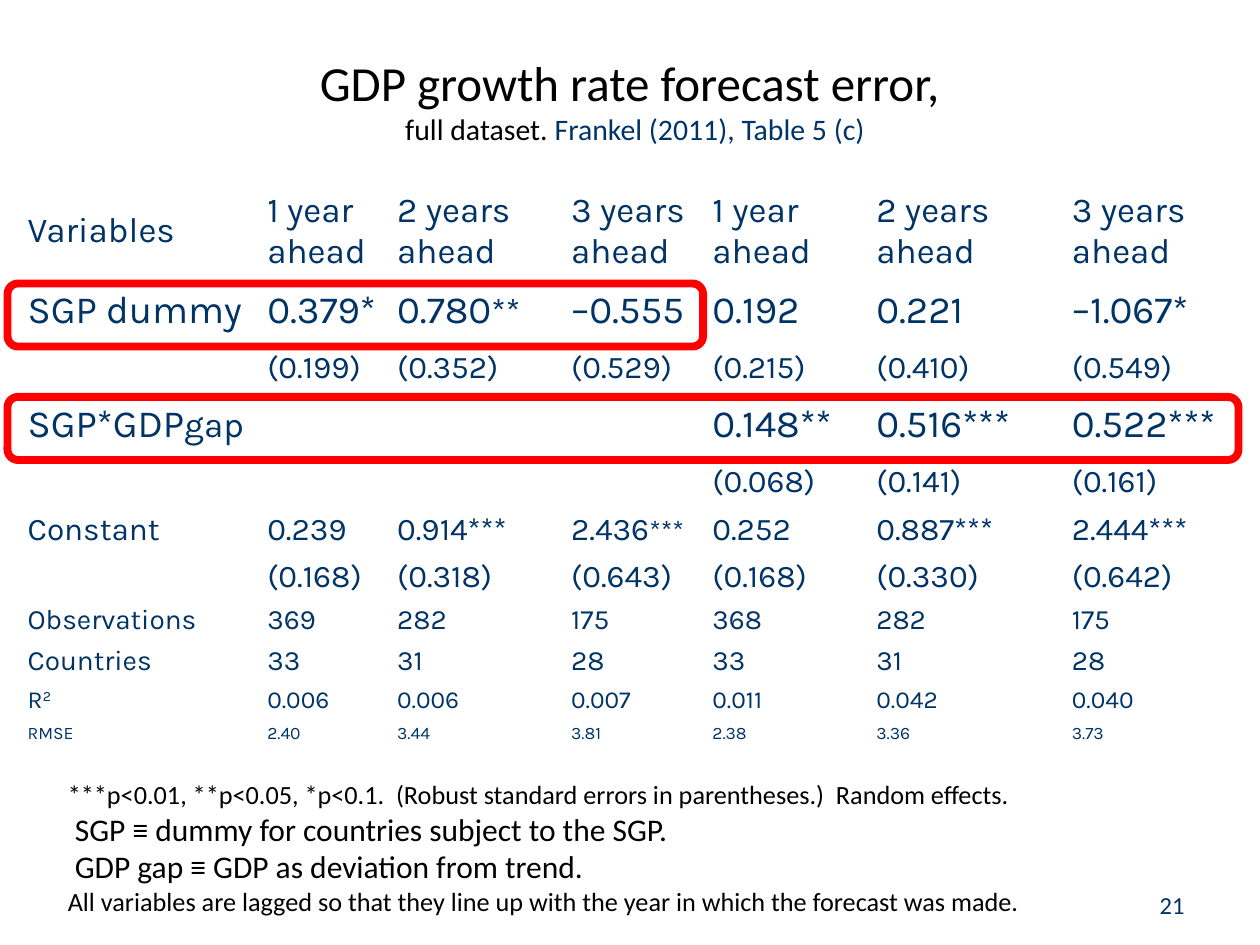
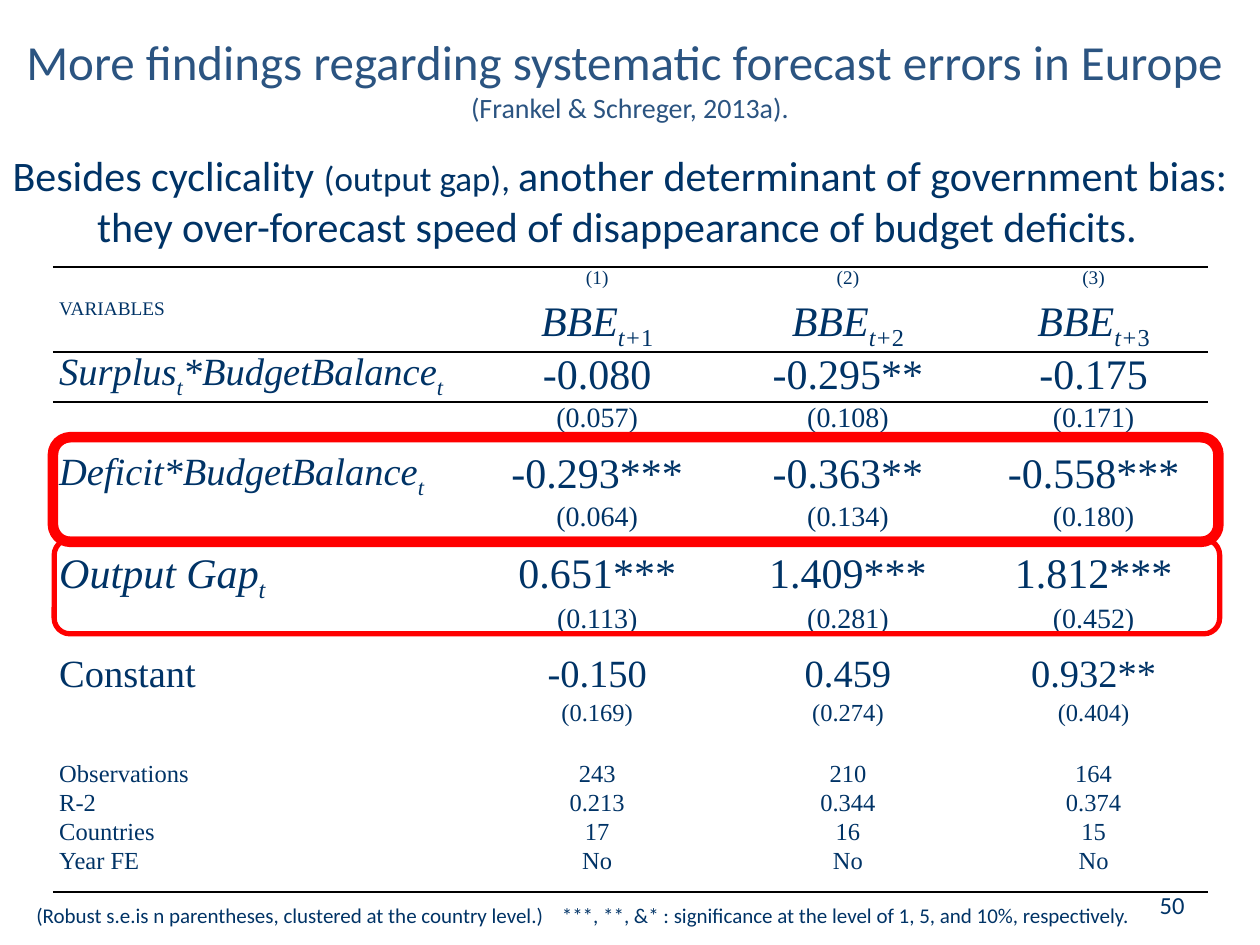
from dataclasses import dataclass

from lxml import etree
from pptx import Presentation, util as u
from pptx.dml.color import RGBColor
from pptx.enum import shapes, text
from pptx.oxml import ns


@dataclass(frozen=True)
class Theme:
    navy: str = "003366"
    blue: str = "2B5481"
    black: str = "000000"
    red: str = "FF0000"
    sans: str = "Calibri"
    grid: str = "Karla"
    serif: str = "Times New Roman"
    title: int = 28
    lead: int = 24
    page: int = 14
    plain: str = "{2D5ABB26-0587-4C30-8999-92F81FD0307C}"


T = Theme()
WIDE, HIGH = u.Inches(10), u.Inches(7.5)
MID, TOP = text.MSO_ANCHOR.MIDDLE, text.MSO_ANCHOR.TOP
LEFT, CENTER, RIGHT = text.PP_ALIGN.LEFT, text.PP_ALIGN.CENTER, text.PP_ALIGN.RIGHT
ITAL = {"italic": True}
SUB = {"italic": True, "base": -25}
LOW = {"base": -25}
SUP = {"base": 30}


# Shared helpers: boxes are percent of the slide (left, top, width, height)
def area(box):
    return [int(side * part / 100) for side, part in zip((WIDE, HIGH) * 2, box)]


def put(item, **form):
    for key, val in form.items():
        setattr(item, key, val)


def tint(run, form):
    for key, val in form.items():
        if key == "color":
            run.font.color.rgb = RGBColor.from_string(val)
        elif key == "base":
            run._r.get_or_add_rPr().set("baseline", str(val * 1000))
        else:
            setattr(run.font, key, u.Pt(val) if key == "size" else val)


def write(para, runs, form):
    """Fill a paragraph from a string or a list of (words, format) runs."""
    runs = [(runs, {})] if isinstance(runs, str) else runs
    for words, extra in runs:
        look = {**form, **extra}
        for num, line in enumerate(words.split("\n")):
            if num:
                gap = para._p.add_br()
                etree.SubElement(gap, ns.qn("a:rPr"), sz=str(look["size"] * 100))
            if line:
                run = para.add_run()
                run.text = line
                tint(run, look)
    if not any(words for words, _ in runs):
        etree.SubElement(para._p, ns.qn("a:endParaRPr"), sz=str(form["size"] * 100))


def fill(shape, box, paras, form, align=LEFT, **frame):
    put(shape, **dict(zip(("left", "top", "width", "height"), area(box))))
    body = shape.text_frame
    put(body, **{"word_wrap": True, "auto_size": text.MSO_AUTO_SIZE.NONE, **frame})
    for num, runs in enumerate(paras):
        para = body.add_paragraph() if num else body.paragraphs[0]
        para.alignment = align
        write(para, runs, form)
    return body


def title(slide, box, runs, color):
    form = {"size": T.title, "name": T.sans, "color": color}
    fill(slide.shapes.title, box, [runs], form, CENTER, vertical_anchor=MID)


def note(slide, box, paras, form):
    fill(slide.shapes.add_textbox(0, 0, 0, 0), box, paras, {"name": T.sans, **form},
         vertical_anchor=MID, word_wrap=False,
         auto_size=text.MSO_AUTO_SIZE.SHAPE_TO_FIT_TEXT)


def page(slide, num):
    fill(slide.shapes.add_textbox(0, 0, 0, 0), (71.7, 91.07, 23.3, 6.93), [num],
         {"size": T.page, "name": T.sans, "color": T.navy}, RIGHT,
         vertical_anchor=text.MSO_ANCHOR.BOTTOM)


def frame(slide, box, width):
    ring = slide.shapes.add_shape(shapes.MSO_SHAPE.ROUNDED_RECTANGLE, *area(box))
    ring.shadow.inherit = False
    ring.fill.background()
    ring.line.color.rgb = RGBColor.from_string(T.red)
    ring.line.width = u.Pt(width)


def edge(cell, side):
    line = etree.SubElement(cell._tc.get_or_add_tcPr(), ns.qn("a:ln" + side), w="12700")
    paint = etree.SubElement(line, ns.qn("a:solidFill"))
    etree.SubElement(paint, ns.qn("a:srgbClr"), val=T.black)


def table(slide, box, cols, rows, font, align, anchor, pad, rules=None):
    """Rows are (height, label size, value size, label, values)."""
    grid = slide.shapes.add_table(len(rows), len(cols), *area(box)).table
    put(grid, first_row=False, horz_banding=False)
    grid._tbl.tblPr.find(ns.qn("a:tableStyleId")).text = T.plain
    span, tall = area(box)[2:]
    for col, part in zip(grid.columns, cols):
        col.width = int(span * part / sum(cols))
    total = sum(row[0] for row in rows)
    for r, (part, head, size, label, vals) in enumerate(rows):
        grid.rows[r].height = int(tall * part / total)
        vals = vals.split("|") if isinstance(vals, str) else vals
        for c, runs in enumerate([label, *vals]):
            cell = grid.cell(r, c)
            put(cell, vertical_anchor=anchor, margin_left=u.Inches(0.05),
                margin_right=u.Inches(0.05), margin_top=u.Inches(pad),
                margin_bottom=u.Inches(pad))
            para = cell.text_frame.paragraphs[0]
            para.alignment = align if c else LEFT
            write(para, runs, {"size": size if c else head, "name": font, "color": T.navy})
            for side in (rules or {}).get(r, ""):
                edge(cell, side)
            cell.fill.background()


# Slide 21: growth forecast errors
def growth(deck):
    slide = deck.slides.add_slide(deck.slide_layouts[5])
    page(slide, "21")
    note(slide, (4.4, 81.6, 78.7, 16.13), [
        "***p<0.01, **p<0.05, *p<0.1.  (Robust standard errors in parentheses.)  Random effects.",
        [(" SGP ≡ dummy for countries subject to the SGP.", {"size": 18})],
        [(" GDP gap ≡ GDP as deviation from trend.", {"size": 18})],
        "All variables are lagged so that they line up with the year in which "
        "the forecast was made."], {"size": 15, "color": T.black})

    years = "1 year ahead|2 years ahead|3 years ahead"
    twice = [("0.780", {}), ("**", {"size": 20})]
    thrice = [("2.436", {}), ("***", {"size": 16})]
    cross = [("SGP*GDP", {}), ("gap", {"size": 20})]
    rows = [
        (0.72, 20, 20, "Variables", f"{years}|{years}"),
        (0.53, 22, 22, "SGP dummy",
         ["0.379*", twice, "–0.555", "0.192", "0.221", "–1.067*"]),
        (0.38, 18, 18, "", "(0.199)|(0.352)|(0.529)|(0.215)|(0.410)|(0.549)"),
        (0.53, 22, 22, cross, "|||0.148**|0.516***|0.522***"),
        (0.38, 18, 18, "", "|||(0.068)|(0.141)|(0.161)"),
        (0.38, 18, 18, "Constant",
         ["0.239", "0.914***", thrice, "0.252", "0.887***", "2.444***"]),
        (0.35, 18, 18, "", "(0.168)|(0.318)|(0.643)|(0.168)|(0.330)|(0.642)"),
        (0.33, 16, 16, "Observations", "369|282|175|368|282|175"),
        (0.32, 16, 16, "Countries", "33|31|28|33|31|28"),
        (0.29, 14, 14, [("R", {}), ("2", SUP)], "0.006|0.006|0.007|0.011|0.042|0.040"),
        (0.22, 10, 10, "RMSE", "2.40|3.44|3.81|2.38|3.36|3.73"),
    ]
    table(slide, (1.7, 19.6, 96.7, 59.07), (1.9, 1.03, 1.38, 1.12, 1.3, 1.55, 1.38),
          rows, T.grid, LEFT, MID, 0.03)
    title(slide, (12.2, 4.67, 76.4, 11.73), [
        ("GDP growth rate forecast error, \n", {}),
        ("full dataset. ", {"size": 17}),
        ("Frankel (2011), Table 5 (c)", {"size": 17, "color": T.navy})], T.black)
    for top, width in ((42, 97.7), (30, 55.2)):
        frame(slide, (0.6, top, width, 6.67), 4.5)


# Slide 50: budget balance errors
def budget(deck):
    slide = deck.slides.add_slide(deck.slide_layouts[1])
    page(slide, "50")
    title(slide, (0, 1.07, 100, 14.4), [
        ("More findings regarding systematic forecast errors in Europe \n", {}),
        ("(Frankel & Schreger, 2013a).", {"size": 16})], T.blue)
    lead = fill(slide.placeholders[1], (0, 15.2, 100, 13.33), [[
        ("Besides cyclicality ", {}),
        ("(output gap), ", {"size": 20}),
        ("another determinant of government bias:\n"
         "they over-forecast speed of disappearance of budget deficits.", {})]],
        {"size": T.lead, "name": T.sans, "color": T.navy}, vertical_anchor=TOP)
    hang = lead.paragraphs[0]._p.get_or_add_pPr()
    for key, val in (("marL", 0.67), ("indent", -0.67)):
        hang.set(key, str(int(u.Inches(val))))
    etree.SubElement(hang, ns.qn("a:buNone"))

    heads = [[("BBE", ITAL), ("t+", SUB), (n, LOW)] for n in "123"]
    surplus = [("Surplus", ITAL), ("t", SUB), ("*BudgetBalance", ITAL), ("t", SUB)]
    deficit = [("Deficit*BudgetBalance", ITAL), ("t", SUB)]
    output = [("Output Gap", ITAL), ("t", SUB)]
    rows = [
        (0.25, 11, 11, "", "(1)|(2)|(3)"),
        (0.4, 11, 24, "VARIABLES", heads),
        (0.4, 22, 24, surplus, "-0.080|-0.295**|-0.175"),
        (0.39, 16, 16, "", "(0.057)|(0.108)|(0.171)"),
        (0.4, 22, 24, deficit, "-0.293***|-0.363**|-0.558***"),
        (0.39, 16, 16, "", "(0.064)|(0.134)|(0.180)"),
        (0.4, 24, 24, output, "0.651***|1.409***|1.812***"),
        (0.39, 16, 16, "", "(0.113)|(0.281)|(0.452)"),
        (0.37, 22, 22, "Constant", "-0.150|0.459|0.932**"),
        (0.25, 14, 14, "", "(0.169)|(0.274)|(0.404)"),
        (0.2, 14, 14, "", "||"),
        (0.23, 14, 14, "Observations", "243|210|164"),
        (0.23, 14, 14, "R-2", "0.213|0.344|0.374"),
        (0.23, 14, 14, "Countries", "17|16|15"),
        (0.35, 14, 14, "Year FE", "No|No|No"),
    ]
    table(slide, (4.2, 28.27, 91.7, 65.07), (3.37, 1.9, 2.08, 1.82), rows,
          T.serif, CENTER, TOP, 0, {0: "T", 1: "B", 2: "T", 14: "B"})
    note(slide, (1.9, 94.8, 90.6, 4), [
        "(Robust s.e.is n parentheses, clustered at the country level.)    "
        "***, **, &* : significance at the level of 1, 5, and 10%, respectively."],
        {"size": 12, "color": T.navy})
    frame(slide, (4.2, 46.27, 92.5, 11.07), 6)
    frame(slide, (4.3, 57.07, 92.5, 10), 3)


def main():
    deck = Presentation()
    put(deck, slide_width=WIDE, slide_height=HIGH)
    growth(deck)
    budget(deck)
    deck.save("out.pptx")


if __name__ == "__main__":
    main()
